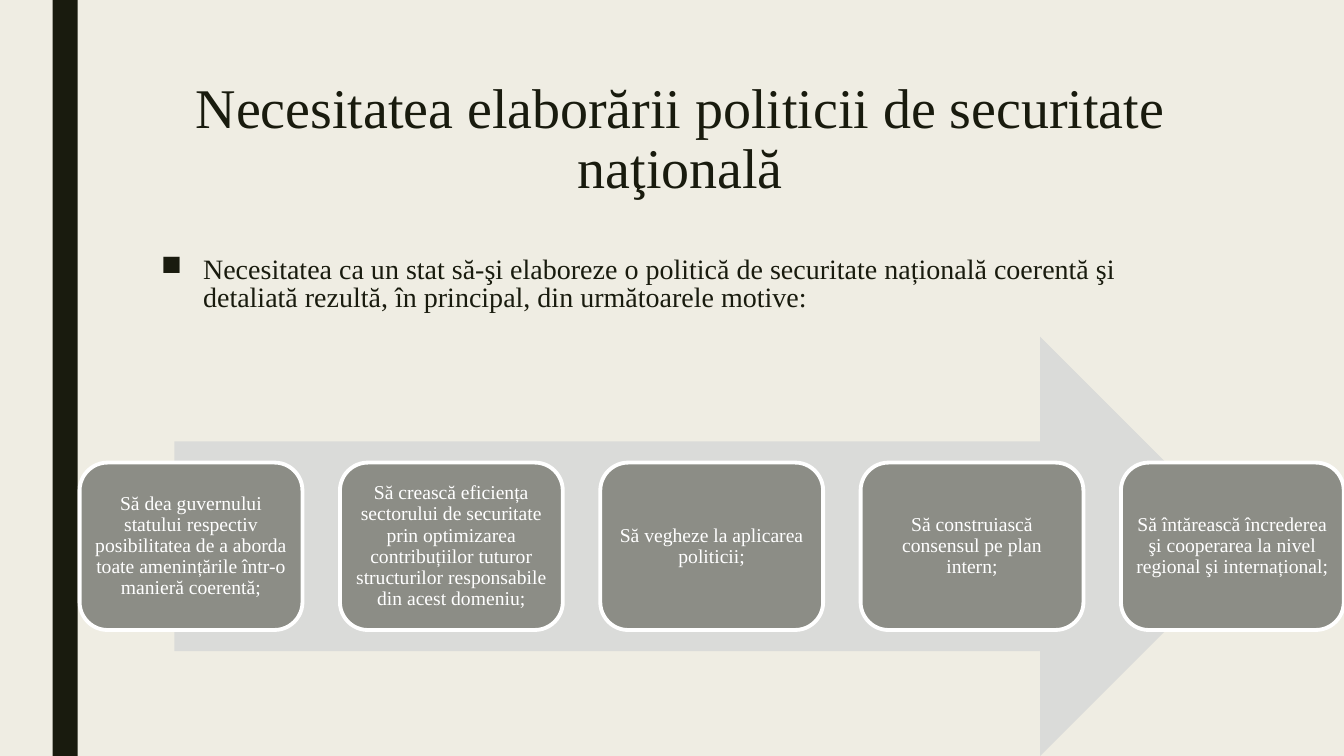
from lxml import etree
from pptx import Presentation
from pptx import util as u
from pptx.dml.color import RGBColor
from pptx.enum import shapes, text
from pptx.oxml.ns import qn

COLORS = {
    "background": "EFEDE3",
    "ink": "191B0E",
    "arrow": "DADBD9",
    "card": "8C8D86",
    "white": "FFFFFF",
}
REASONS = [
    "Să dea guvernului statului respectiv posibilitatea de a aborda toate "
    "amenințările într-o manieră coerentă;",
    "Să crească eficiența sectorului de securitate prin optimizarea "
    "contribuțiilor tuturor structurilor responsabile din acest domeniu;",
    "Să vegheze la aplicarea politicii;",
    "Să construiască consensul pe plan intern;",
    "Să întărească încrederea şi cooperarea la nivel regional şi internațional;",
]
CARD_LEFT, CARD_STEP = 56.9, 185.95


def color(name):
    return RGBColor.from_string(COLORS[name])


def apply(target, values):
    for name, value in values.items():
        setattr(target, name, value)


class SlideBuilder:
    font = "Times New Roman"

    def __init__(self, slide):
        self.slide = slide
        fill = slide.background.fill
        fill.solid()
        fill.fore_color.rgb = color("background")

    def set_text(self, shape, words, size, ink, frame_format, paragraph_format, bullet=None):
        frame = shape.text_frame
        apply(frame, {"word_wrap": True, **frame_format})
        paragraph = frame.paragraphs[0]
        paragraph.text = words
        apply(paragraph, paragraph_format)
        if bullet:
            self.add_bullet(paragraph, bullet, 30)
        apply(paragraph.runs[0].font, {"name": self.font, "size": u.Pt(size)})
        paragraph.runs[0].font.color.rgb = color(ink)

    def add_bullet(self, paragraph, character, indent):
        properties = paragraph._p.get_or_add_pPr()
        properties.set("marL", str(u.Pt(indent)))
        properties.set("indent", str(-u.Pt(indent)))
        etree.SubElement(properties, qn("a:buChar")).set("char", character)

    def textbox(self, box, words, size, paragraph_format, bullet=None):
        shape = self.slide.shapes.add_textbox(*map(u.Pt, box))
        self.set_text(shape, words, size, "ink", {}, paragraph_format, bullet)

    def shape(self, kind, box, fill, outline=None):
        shape = self.slide.shapes.add_shape(kind, *map(u.Pt, box))
        shape.shadow.inherit = False
        shape.fill.solid()
        shape.fill.fore_color.rgb = color(fill)
        if outline:
            shape.line.color.rgb = color(outline)
            shape.line.width = u.Pt(2.75)
        else:
            shape.line.fill.background()
        return shape

    def card(self, box, words):
        shape = self.shape(shapes.MSO_SHAPE.ROUNDED_RECTANGLE, box, "card", "white")
        margins = {f"margin_{side}": u.Pt(4.2) for side in ("left", "top", "right", "bottom")}
        self.set_text(
            shape, words, 14, "white",
            {"vertical_anchor": text.MSO_ANCHOR.MIDDLE, **margins},
            {"alignment": text.PP_ALIGN.CENTER, "line_spacing": 0.9},
        )


def main():
    presentation = Presentation()
    apply(presentation, {"slide_width": u.Pt(960), "slide_height": u.Pt(540)})
    builder = SlideBuilder(presentation.slides.add_slide(presentation.slide_layouts[6]))

    # Side band
    builder.shape(shapes.MSO_SHAPE.RECTANGLE, (37.5, 0, 18, 540), "ink")

    # Title and introduction
    builder.textbox(
        (108, 54, 756, 116.6), "Necesitatea elaborării politicii de securitate naţională", 40,
        {"alignment": text.PP_ALIGN.CENTER, "line_spacing": 0.89},
    )
    builder.textbox(
        (108, 180, 756, 51),
        "Necesitatea ca un stat să-şi elaboreze o politică de securitate națională "
        "coerentă şi detaliată rezultă, în principal, din următoarele motive:", 20,
        {"line_spacing": 0.84, "space_after": u.Pt(2)}, bullet="■",
    )

    # Arrow with the five reasons
    builder.shape(shapes.MSO_SHAPE.RIGHT_ARROW, (124.5, 240.5, 768.2, 299.5), "arrow")
    for index, reason in enumerate(REASONS):
        builder.card((CARD_LEFT + index * CARD_STEP, 330.4, 159.2, 119.6), reason)

    presentation.save("out.pptx")


if __name__ == "__main__":
    main()
